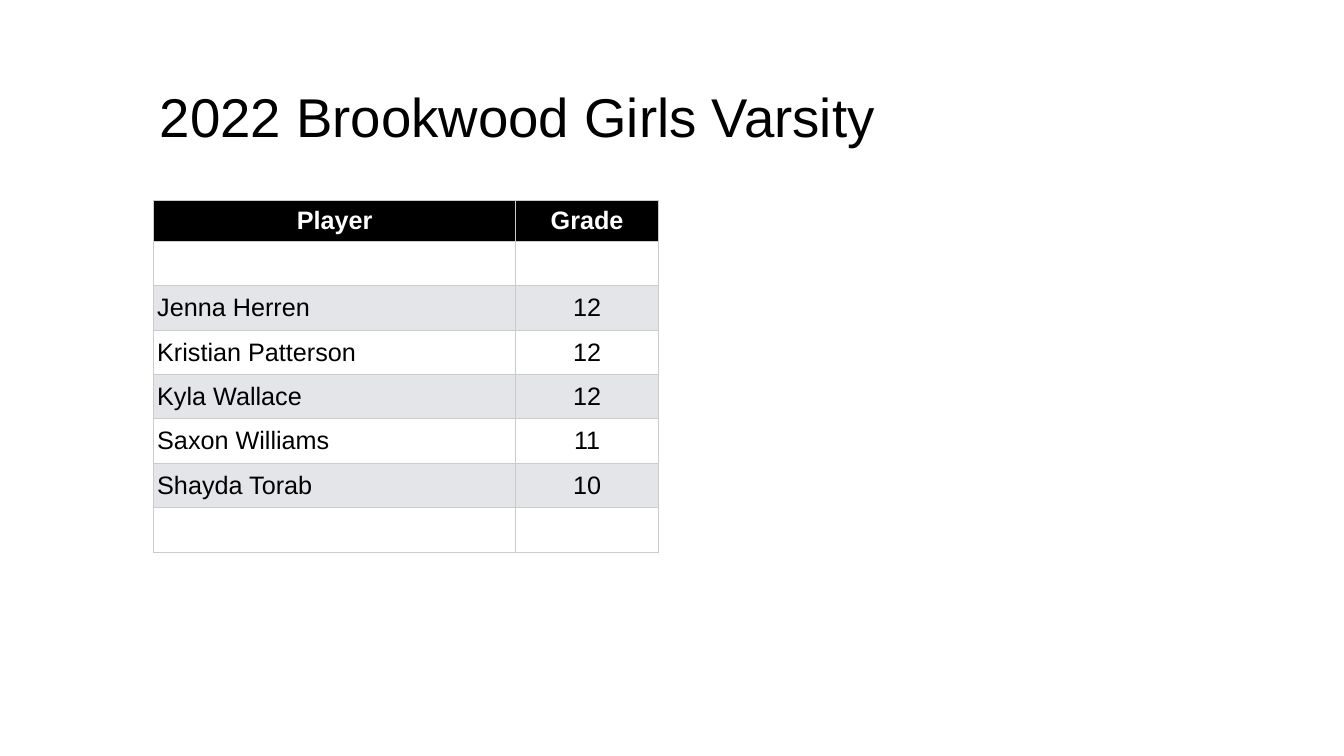
from lxml.etree import SubElement
from pptx import Presentation
from pptx.dml.color import RGBColor
from pptx.enum.text import MSO_ANCHOR as Anchor, MSO_AUTO_SIZE as AutoSize, PP_ALIGN as Align
from pptx.oxml.ns import qn
from pptx.util import Pt

SCALE = 9144  # EMU per px, 100 px to the inch
COLORS = {
    "text": "000000",
    "header": "000000",
    "header_text": "FFFFFF",
    "plain": "FFFFFF",
    "band": "E3E5E8",
    "border": "CBCBCB",
}
ROSTER = [
    ("Player", "Grade"),
    ("", ""),
    ("Jenna Herren", "12"),
    ("Kristian Patterson", "12"),
    ("Kyla Wallace", "12"),
    ("Saxon Williams", "11"),
    ("Shayda Torab", "10"),
    ("", ""),
]


def px(n):
    return n * SCALE


def rgb(name):
    return RGBColor.from_string(COLORS[name])


class SlideBuilder:
    font = "Arial"
    title_size = 78
    cell_size = 36

    def __init__(self, slide):
        self.slide = slide

    def style(self, p, size, color, align, bold=False):
        p.alignment = align
        for r in p.runs:
            r.font.name = self.font
            r.font.size = Pt(size)
            r.font.bold = bold
            r.font.color.rgb = rgb(color)

    def title(self, text, x, y, w, h):
        sp = self.slide.shapes.title
        sp.left, sp.top, sp.width, sp.height = map(px, (x, y, w, h))
        tf = sp.text_frame
        tf.text = text
        tf.word_wrap = True
        tf.auto_size = AutoSize.NONE
        tf.vertical_anchor = Anchor.MIDDLE
        tf.margin_left = tf.margin_right = tf.margin_top = tf.margin_bottom = px(6)
        self.style(tf.paragraphs[0], self.title_size, "text", Align.LEFT)

    def borders(self, cell):
        tc_pr = cell._tc.get_or_add_tcPr()
        for side in ("lnL", "lnR", "lnT", "lnB"):
            ln = SubElement(tc_pr, qn(f"a:{side}"), w=str(Pt(1)))
            fill = SubElement(ln, qn("a:solidFill"))
            SubElement(fill, qn("a:srgbClr"), val=COLORS["border"])

    def cell(self, cell, text, fill, color, align, margins, bold):
        self.borders(cell)
        cell.fill.solid()
        cell.fill.fore_color.rgb = rgb(fill)
        cell.vertical_anchor = Anchor.MIDDLE
        cell.margin_left = cell.margin_right = px(margins[0])
        cell.margin_top = cell.margin_bottom = px(margins[1])
        cell.text = text
        self.style(cell.text_frame.paragraphs[0], self.cell_size, color, align, bold)

    def table(self, rows, x, y, widths, header_h, row_h):
        heights = [header_h] + [row_h] * (len(rows) - 1)
        frame = self.slide.shapes.add_table(
            len(rows), len(widths), px(x), px(y), px(sum(widths)), px(sum(heights)))
        table = frame.table
        for column, width in zip(table.columns, widths):
            column.width = px(width)
        for i, row in enumerate(rows):
            table.rows[i].height = px(heights[i])
            header = i == 0
            fill = "header" if header else "plain" if i % 2 else "band"
            # The blank last row stays plain, as it closes the table
            if not any(row):
                fill = "plain"
            for j, text in enumerate(row):
                self.cell(
                    table.cell(i, j), text, fill,
                    color="header_text" if header else "text",
                    align=Align.CENTER if header or j else Align.LEFT,
                    margins=(6, 6) if header else (7, 0),
                    bold=header)


def main():
    prs = Presentation()
    prs.slide_width, prs.slide_height = px(2667), px(1500)
    s = SlideBuilder(prs.slides.add_slide(prs.slide_layouts[5]))

    # Heading
    s.title("2022 Brookwood Girls Varsity", 311, 104, 2171, 250)

    # Roster
    s.table(ROSTER, 305, 398, widths=(718, 284), header_h=81, row_h=88)

    prs.save("out.pptx")


if __name__ == "__main__":
    main()
